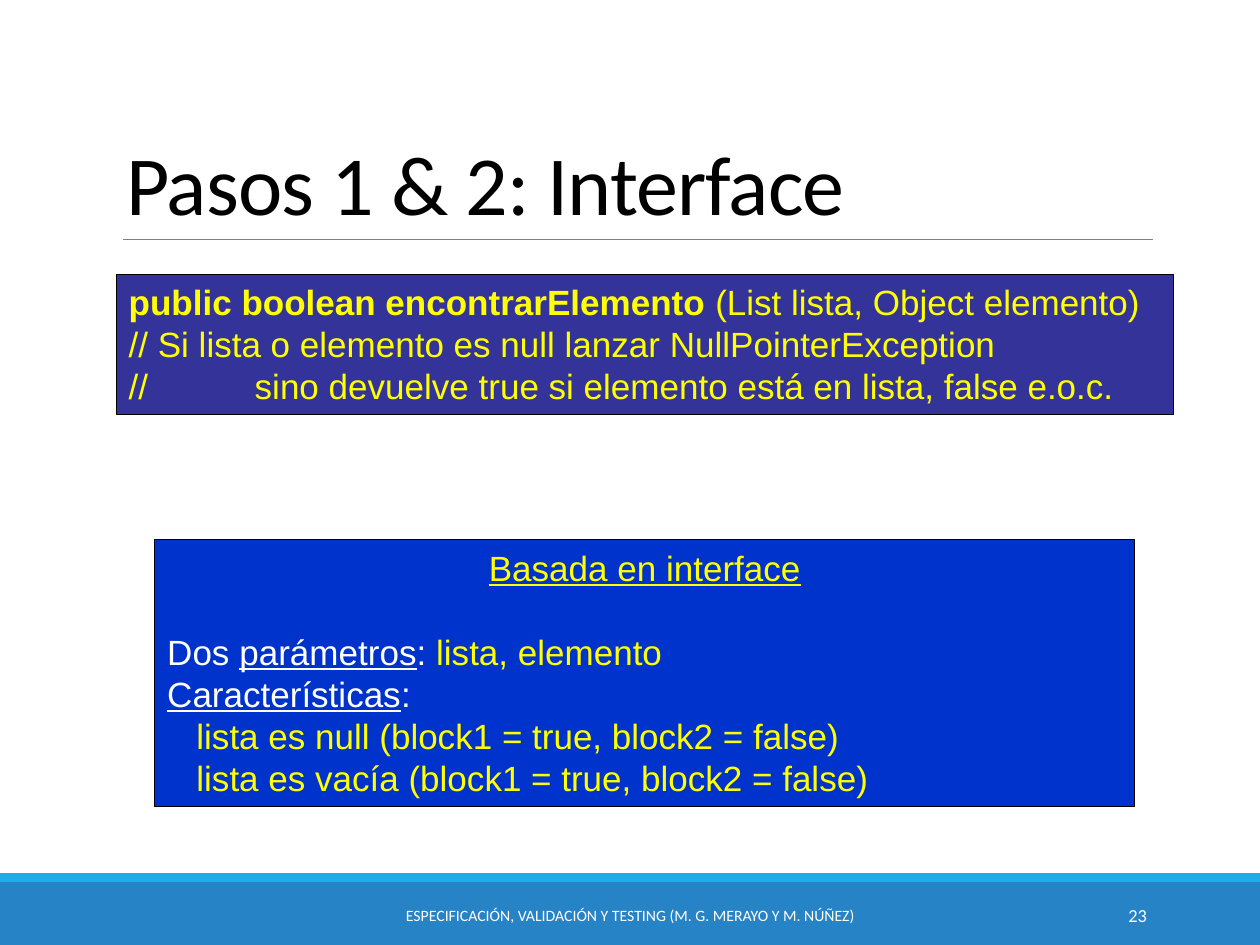
import pptx
import pptx.dml.color
import pptx.enum.shapes
import pptx.enum.text
import pptx.oxml.ns
import pptx.util
from lxml import etree

Pt = pptx.util.Pt
ALIGN = pptx.enum.text.PP_ALIGN
ANCHOR = pptx.enum.text.MSO_ANCHOR

COLORS = {
    "black": "000000", "white": "FFFFFF", "yellow": "FFFF00",
    "rule": "808080", "footer": "2683C6", "footer_edge": "1CADE4",
    "code": "333399", "interface": "0033CC",
}


def rgb(name):
    return pptx.dml.color.RGBColor.from_string(COLORS[name])


def set_font(font, face, size, color):
    font.name, font.size = face, Pt(size)
    font.color.rgb = rgb(color)


def add_box(slide, bounds, fill, outline=None):
    box = slide.shapes.add_shape(
        pptx.enum.shapes.MSO_SHAPE.RECTANGLE, *map(Pt, bounds))
    box.shadow.inherit = False
    box.fill.solid()
    box.fill.fore_color.rgb = rgb(fill)
    if outline:
        box.line.color.rgb = rgb(outline)
        box.line.width = Pt(0.75)
    else:
        box.line.fill.background()
    return box


def add_rule(slide, left, right, y):
    rule = slide.shapes.add_connector(
        pptx.enum.shapes.MSO_CONNECTOR.STRAIGHT, Pt(left), Pt(y), Pt(right), Pt(y))
    rule.line.color.rgb = rgb("rule")
    rule.line.width = Pt(0.5)
    etree.SubElement(rule.element.spPr, pptx.oxml.ns.qn("a:effectLst"))


def add_title(slide, text):
    title = slide.shapes.title
    title.left, title.top, title.width, title.height = map(Pt, (65, 22, 641, 114.7))
    frame = title.text_frame
    frame.text = text
    frame.auto_size = pptx.enum.text.MSO_AUTO_SIZE.NONE
    frame.vertical_anchor = ANCHOR.BOTTOM
    paragraph = frame.paragraphs[0]
    paragraph.alignment = ALIGN.LEFT
    paragraph.line_spacing = 0.85
    set_font(paragraph.font, "Calibri", 48, "black")
    # Tighten the letter spacing by half a point
    paragraph.runs[0].font._element.set("spc", "-50")


def add_footer_text(slide, text, left, width, size, alignment):
    frame = slide.shapes.add_textbox(Pt(left), Pt(508.5), Pt(width), Pt(28.75)).text_frame
    frame.word_wrap = True
    frame.vertical_anchor = ANCHOR.MIDDLE
    paragraph = frame.paragraphs[0]
    paragraph.text = text
    paragraph.alignment = alignment
    set_font(paragraph.font, "Calibri", size, "white")


def add_panel(slide, bounds, fill, lines):
    """Each line is a colour and its runs; a run is text, style and optional colour."""
    frame = add_box(slide, bounds, fill, "black").text_frame
    frame.word_wrap = True
    frame.vertical_anchor = ANCHOR.TOP
    for index, (color, runs) in enumerate(lines):
        paragraph = frame.add_paragraph() if index else frame.paragraphs[0]
        paragraph.alignment = ALIGN.LEFT
        set_font(paragraph.font, "Arial", 20, color)
        for text, style, *run_color in runs:
            run = paragraph.add_run()
            run.text = text
            if style == "bold":
                run.font.bold = True
            elif style == "underline":
                run.font.underline = True
            if run_color:
                run.font.color.rgb = rgb(run_color[0])
    return frame.paragraphs


def set_indent(paragraph, margin, first_line=0):
    properties = paragraph._p.get_or_add_pPr()
    properties.set("marL", str(int(Pt(margin))))
    properties.set("indent", str(int(Pt(first_line))))


def main():
    deck = pptx.Presentation()
    deck.slide_width, deck.slide_height = Pt(720), Pt(540)
    slide = deck.slides.add_slide(deck.slide_layouts[5])

    # Footer bands, title and rule
    add_box(slide, (0, 504, 720, 36), "footer")
    add_box(slide, (0, 499, 720, 5), "footer_edge")
    add_rule(slide, 70.5, 659, 136.8)
    add_title(slide, "Pasos 1 & 2: Interface")
    add_footer_text(slide, "ESPECIFICACIÓN, VALIDACIÓN Y TESTING (M. G. MERAYO Y M. NÚÑEZ)",
                    217.5, 285, 9, ALIGN.CENTER)
    add_footer_text(slide, "23", 584.5, 78, 10.5, ALIGN.RIGHT)

    # Method signature
    code = add_panel(slide, (66.5, 156.75, 604, 80), "code", [
        ("yellow", [("public boolean encontrarElemento ", "bold"),
                    ("(List lista, Object elemento)", None)]),
        ("yellow", [("// Si lista o elemento es null lanzar NullPointerException", None)]),
        ("yellow", [("//\tsino devuelve true si elemento está en lista, false e.o.c.", None)]),
    ])
    set_indent(code[2], 72, -72)

    # Interface-based characteristics
    interface = add_panel(slide, (88.5, 308.5, 560, 152.5), "interface", [
        ("yellow", [("Basada en interface", "underline")]),
        ("white", [("Dos ", None), ("parámetros", "underline"), (":", None),
                   (" lista, elemento", None, "yellow")]),
        ("white", [("Características", "underline"), (":", None)]),
        ("yellow", [("lista es null (block1 = true, block2 = false)", None)]),
        ("yellow", [("lista es vacía (block1 = true, block2 = false)", None)]),
    ])
    interface[0].alignment = ALIGN.CENTER
    interface[0].space_after = Pt(24)
    for characteristic in interface[3:]:
        set_indent(characteristic, 16.7)

    deck.save("out.pptx")


if __name__ == "__main__":
    main()
